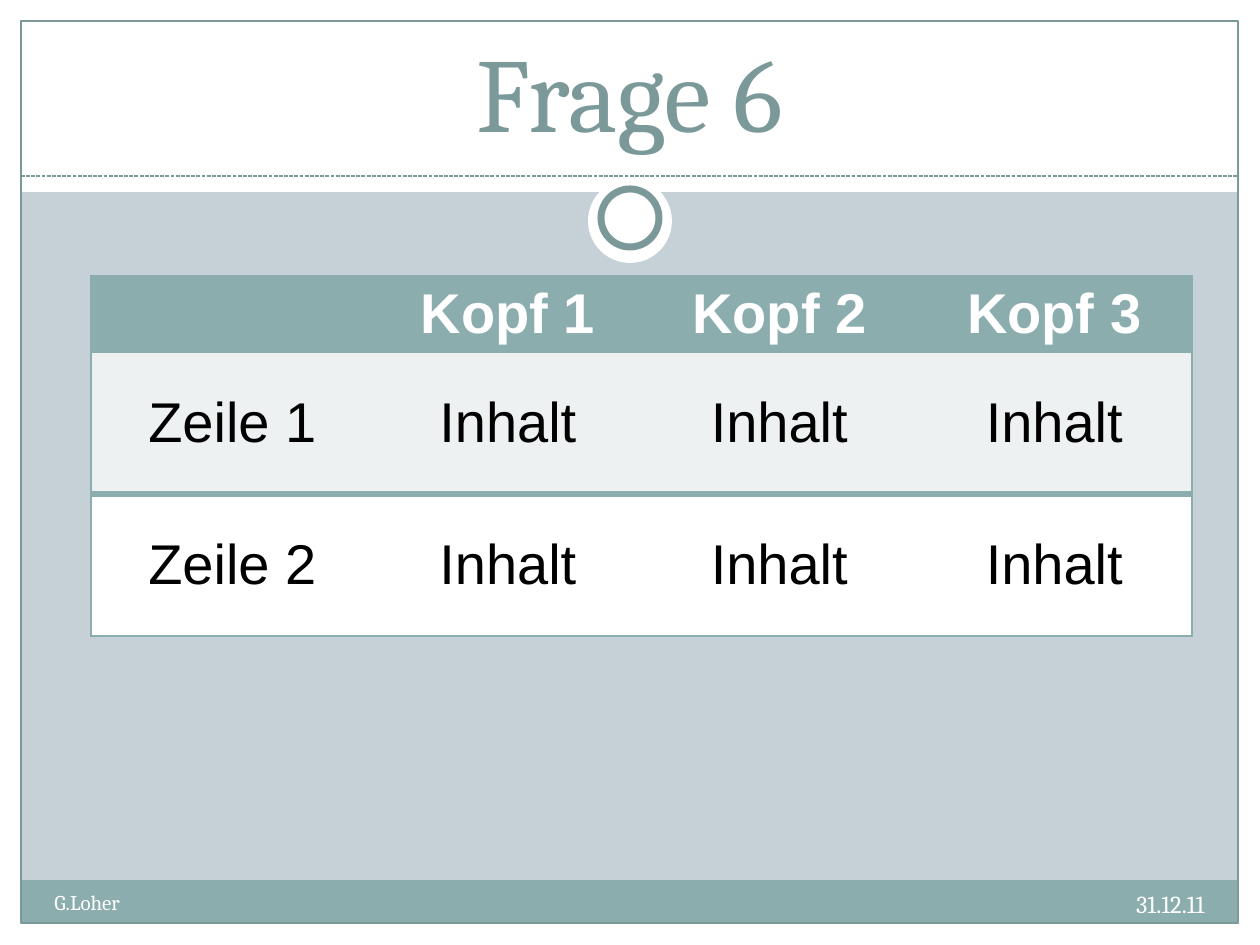
from pptx import Presentation
from pptx import util as u
from pptx.dml.color import RGBColor
from pptx.enum import dml, shapes, text
from pptx.oxml.ns import qn
from lxml import etree

TEAL, DARK, WHITE = "8CADAE", "7C999A", "FFFFFF"
RECT, OVAL = shapes.MSO_SHAPE.RECTANGLE, shapes.MSO_SHAPE.OVAL
LEFT, MID, RIGHT = text.PP_ALIGN.LEFT, text.PP_ALIGN.CENTER, text.PP_ALIGN.RIGHT


def px(n):
    return u.Emu(round(n * 914400 / 126))


def rgb(code):
    return RGBColor.from_string(code)


def paint(fill, code):
    fill.solid()
    fill.fore_color.rgb = rgb(code)


def style(par, size, face, code, align=LEFT, bold=False):
    par.alignment = align
    font = par.font
    font.size, font.name, font.bold = u.Pt(size), face, bold
    font.color.rgb = rgb(code)


def add_shape(slide, kind, box, fill=None, line=None, width=0.75):
    shape = slide.shapes.add_shape(kind, *map(px, box))
    shape.shadow.inherit = False
    if fill:
        paint(shape.fill, fill)
    else:
        shape.fill.background()
    if line:
        shape.line.color.rgb = rgb(line)
        shape.line.width = u.Pt(width)
    else:
        shape.line.fill.background()


def add_rule(slide, x1, x2, y):
    rule = slide.shapes.add_connector(
        shapes.MSO_CONNECTOR.STRAIGHT, px(x1), px(y), px(x2), px(y))
    rule.line.color.rgb = rgb(DARK)
    rule.line.width = u.Pt(0.75)
    rule.line.dash_style = dml.MSO_LINE.SQUARE_DOT
    etree.SubElement(rule._element.spPr, qn("a:effectLst"))


def add_title(slide, words, box):
    """Fill the title placeholder and bring it in front of the frame."""
    title = slide.shapes.title
    slide.shapes._spTree.append(title._element)
    title.left, title.top, title.width, title.height = map(px, box)
    frame = title.text_frame
    frame.text = words
    frame.vertical_anchor = text.MSO_ANCHOR.BOTTOM
    style(frame.paragraphs[0], 60, "Cambria", DARK, MID)


def add_note(slide, words, box, size, align):
    frame = slide.shapes.add_textbox(*map(px, box)).text_frame
    frame.word_wrap = True
    frame.text = words
    style(frame.paragraphs[0], size, "Cambria", WHITE, align)


def add_edge(cell, side, points):
    """Draw one cell border; zero points hides it."""
    props = cell._tc.get_or_add_tcPr()
    edge = etree.SubElement(props, qn("a:ln" + side), w=str(u.Pt(points)))
    if points:
        fill = etree.SubElement(edge, qn("a:solidFill"))
        etree.SubElement(fill, qn("a:srgbClr"), val=TEAL)
    else:
        etree.SubElement(edge, qn("a:noFill"))


def add_table(slide, rows, left, top, widths, heights):
    fills = [TEAL, "EEF1F2", WHITE]
    rules = [1, 1, 4, 1]  # horizontal lines from top to bottom
    last = len(widths) - 1
    table = slide.shapes.add_table(
        len(rows), len(widths), px(left), px(top),
        px(sum(widths)), px(sum(heights))).table
    for col, width in zip(table.columns, widths):
        col.width = px(width)
    for r, row in enumerate(rows):
        table.rows[r].height = px(heights[r])
        for c, words in enumerate(row):
            cell = table.cell(r, c)
            edges = {"L": int(c == 0), "R": int(c == last),
                     "T": rules[r], "B": rules[r + 1]}
            for side, points in edges.items():
                add_edge(cell, side, points)
            paint(cell.fill, fills[r])
            cell.vertical_anchor = text.MSO_ANCHOR.MIDDLE
            cell.margin_top = cell.margin_bottom = 0
            cell.text = words
            head = r == 0
            style(cell.text_frame.paragraphs[0], 32, "Arial",
                  WHITE if head else "000000", MID, head)


def add_frame(slide):
    paint(slide.background.fill, "C5D1D7")
    for box in [(0, 924, 1260, 21), (0, 0, 1260, 192),
                (0, 0, 21, 945), (1239, 0, 21, 945)]:
        add_shape(slide, RECT, box, WHITE)
    add_shape(slide, RECT, (21, 880, 1217, 43), TEAL)
    add_shape(slide, RECT, (21, 21, 1217, 902), line=DARK)
    add_rule(slide, 21, 1239, 176)
    add_shape(slide, OVAL, (588, 179, 84, 84), WHITE)
    add_shape(slide, OVAL, (601, 189, 58, 58), WHITE, DARK, 4)


def main():
    deck = Presentation()
    deck.slide_width, deck.slide_height = px(1260), px(945)
    slide = deck.slides.add_slide(deck.slide_layouts[5])
    add_frame(slide)
    add_title(slide, "Frage 6", (42, 32, 1176, 128))
    add_note(slide, "31.12.11", (797, 883, 420, 50), 14, RIGHT)
    add_note(slide, "G.Loher", (42, 883, 494, 50), 12, LEFT)
    rows = [["", "Kopf 1", "Kopf 2", "Kopf 3"]]
    rows += [[f"Zeile {n}"] + ["Inhalt"] * 3 for n in (1, 2)]
    add_table(slide, rows, 91, 276, [283, 268, 275, 275], [76, 142, 142])
    deck.save("out.pptx")


if __name__ == "__main__":
    main()
